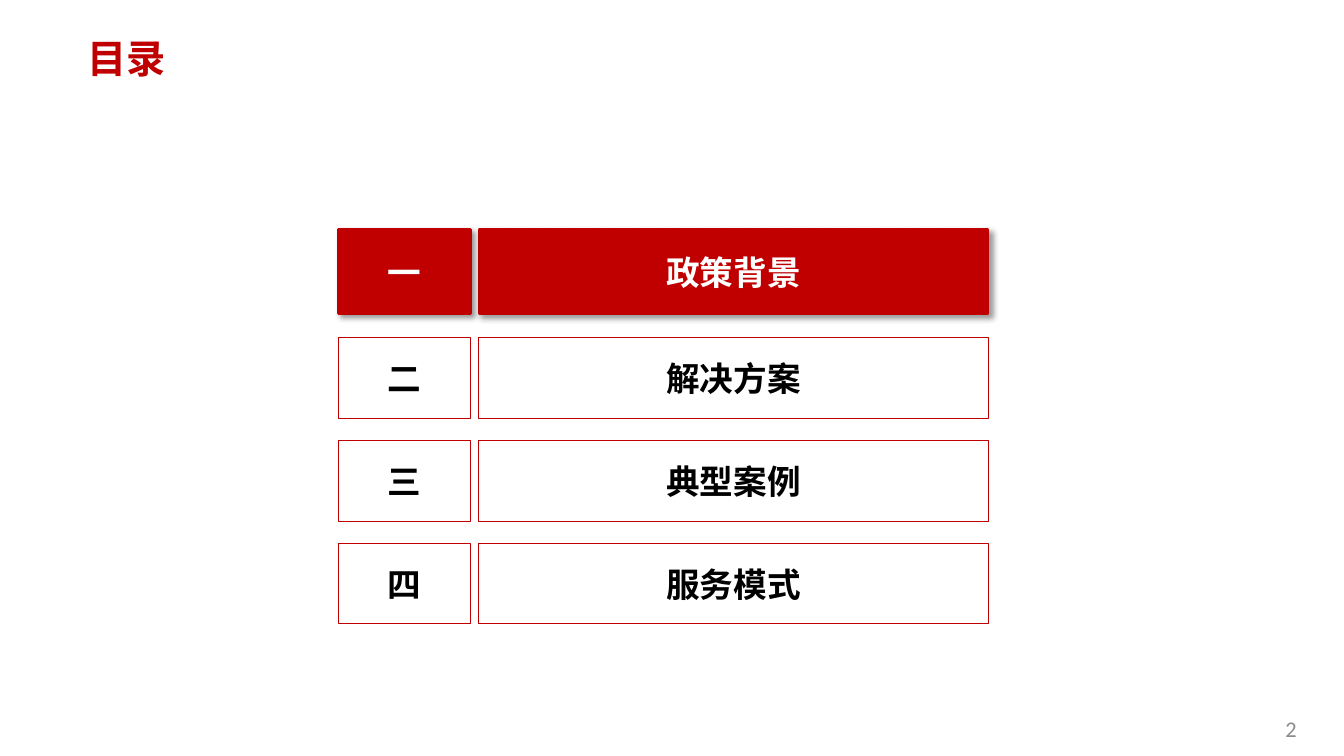
from lxml import etree
from pptx import Presentation
from pptx.dml.color import RGBColor
from pptx.enum.shapes import MSO_SHAPE
from pptx.enum.text import MSO_ANCHOR, MSO_AUTO_SIZE, PP_ALIGN
from pptx.oxml.ns import qn
from pptx.util import Inches, Pt

RECTANGLE = MSO_SHAPE.RECTANGLE
TOP, MIDDLE = MSO_ANCHOR.TOP, MSO_ANCHOR.MIDDLE
LEFT, CENTER = PP_ALIGN.LEFT, PP_ALIGN.CENTER
NO_AUTOFIT = MSO_AUTO_SIZE.NONE

COLORS = {"red": "C00000", "white": "FFFFFF", "black": "000000", "gray": "8C8C8C"}
HEADING_FONT = "Noto Sans CJK SC"
NUMBER_FONT = "Calibri"


class AgendaSlide:
    def __init__(self, presentation):
        self.slide = presentation.slides.add_slide(presentation.slide_layouts[5])

    def set_text(self, frame, text, size, color, font=HEADING_FONT, bold=True, align=CENTER):
        frame.text = text
        paragraph = frame.paragraphs[0]
        paragraph.alignment = align
        for run in paragraph.runs:
            run.font.size = Pt(size)
            run.font.bold = bold
            run.font.color.rgb = RGBColor.from_string(COLORS[color])
            run.font.name = font
            # East Asian glyphs take their own typeface
            etree.SubElement(run._r.get_or_add_rPr(), qn("a:ea"), typeface=font)

    def title(self, text, left, top, width, height):
        title = self.slide.shapes.title
        title.left, title.top = Inches(left), Inches(top)
        title.width, title.height = Inches(width), Inches(height)
        frame = title.text_frame
        frame.auto_size = NO_AUTOFIT
        frame.vertical_anchor = TOP
        self.set_text(frame, text, 28, "red", align=LEFT)
        frame.paragraphs[0].line_spacing = 0.9

    def page_number(self, text, left, top, width, height):
        box = self.slide.shapes.add_textbox(
            Inches(left), Inches(top), Inches(width), Inches(height))
        box.text_frame.word_wrap = False
        self.set_text(box.text_frame, text, 16, "gray", NUMBER_FONT, False, LEFT)

    def cell(self, text, left, top, width, height, active):
        cell = self.slide.shapes.add_shape(
            RECTANGLE, Inches(left), Inches(top), Inches(width), Inches(height))
        cell.shadow.inherit = False
        cell.line.color.rgb = RGBColor.from_string(COLORS["red"])
        cell.line.width = Pt(2 if active else 0.75)
        if active:
            cell.fill.solid()
            cell.fill.fore_color.rgb = RGBColor.from_string(COLORS["red"])
            self.drop_shadow(cell)
        else:
            cell.fill.background()
        frame = cell.text_frame
        frame.word_wrap = True
        frame.vertical_anchor = MIDDLE
        frame.margin_left = frame.margin_right = 0
        frame.margin_top = frame.margin_bottom = 0
        self.set_text(frame, text, 24, "white" if active else "black")

    def drop_shadow(self, shape):
        effects = shape._element.spPr.find(qn("a:effectLst"))
        shadow = etree.SubElement(
            effects, qn("a:outerShdw"), blurRad=str(Pt(4)), dist=str(Pt(3)),
            dir=str(45 * 60000), algn="tl", rotWithShape="0")
        color = etree.SubElement(shadow, qn("a:srgbClr"), val=COLORS["black"])
        etree.SubElement(color, qn("a:alpha"), val="40000")


def main():
    presentation = Presentation()
    presentation.slide_width = Inches(13.33)
    presentation.slide_height = Inches(7.5)
    agenda = AgendaSlide(presentation)

    # Title and page number
    agenda.title("目录", 0.77, 0.34, 11.28, 0.72)
    agenda.page_number("2", 12.65, 7.05, 0.46, 0.37)

    # Agenda rows: the current section is highlighted
    sections = [("一", "政策背景"), ("二", "解决方案"), ("三", "典型案例"), ("四", "服务模式")]
    current, gap = 0, 0.22
    top = 2.28
    for index, (numeral, section) in enumerate(sections):
        active = index == current
        height = 0.83 if active else 0.8
        agenda.cell(section, 4.75, top, 5.05, height, active)
        agenda.cell(numeral, 3.36, top, 1.31, height, active)
        top += height + (gap + 0.02 if active else gap)

    presentation.save("out.pptx")


if __name__ == "__main__":
    main()
